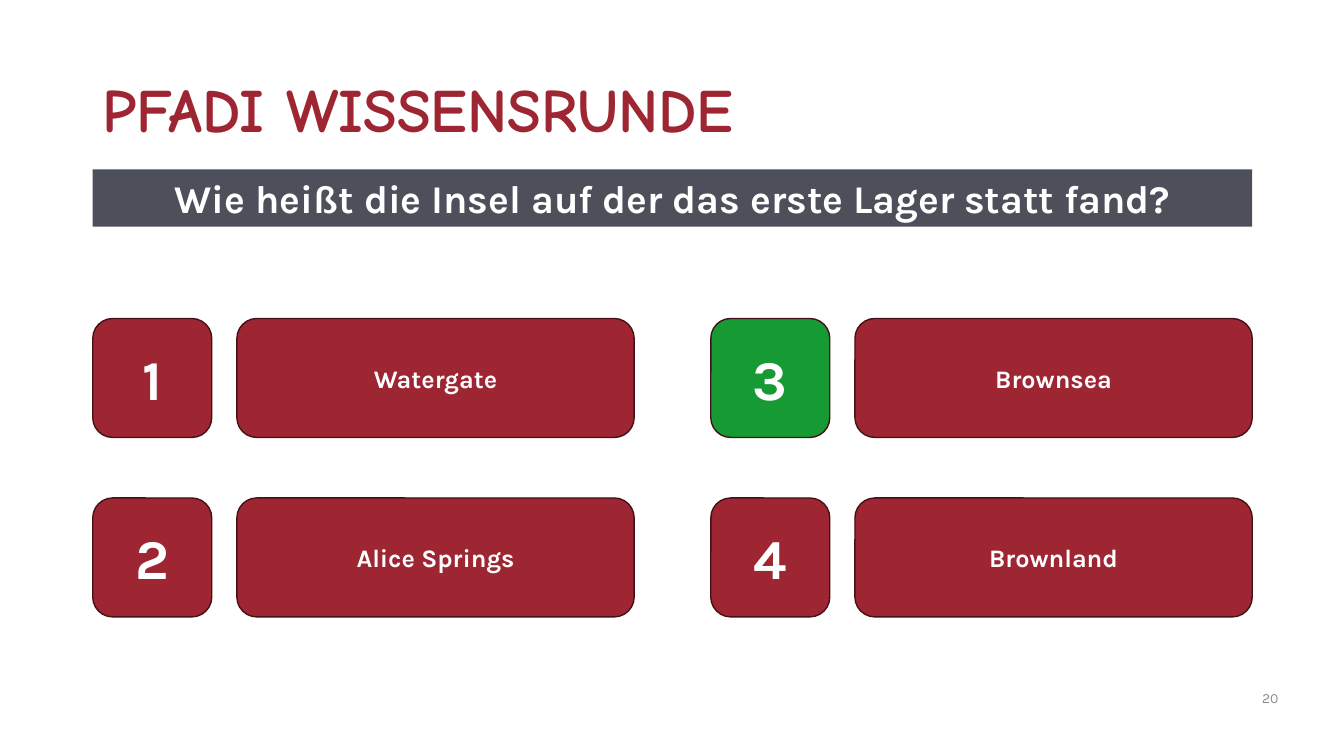
from dataclasses import dataclass

from pptx import Presentation
from pptx.dml.color import RGBColor
from pptx.enum import shapes, text
from pptx.util import Inches, Pt


@dataclass(frozen=True)
class Theme:
    red: str = "9D2632"
    green: str = "159A34"
    slate: str = "4D4F5A"
    outline: str = "451116"
    white: str = "FFFFFF"
    grey: str = "8C8C8C"
    title_font: str = "Comic Neue"
    body_font: str = "Karla"
    title_size: int = 44
    number_size: int = 40
    question_size: int = 28
    answer_size: int = 18
    footer_size: int = 10


THEME = Theme()
LEFT, CONTENT_WIDTH = 0.92, 11.5
TILE, ANSWER_WIDTH = 1.18, 3.94
ANSWER_OFFSET = 1.43
GRID_TOP, COLUMN_STEP, ROW_STEP = 3.16, 6.13, 1.78
ANSWERS = ["Watergate", "Alice Springs", "Brownsea", "Brownland"]
CORRECT_NUMBER = 3


def write_text(shape, content, size, color, font=THEME.body_font, bold=True,
               align=text.PP_ALIGN.CENTER, anchor=text.MSO_ANCHOR.MIDDLE):
    frame = shape.text_frame
    frame.text = content
    frame.word_wrap = True
    frame.vertical_anchor = anchor
    paragraph = frame.paragraphs[0]
    paragraph.alignment = align
    values = {"name": font, "size": Pt(size), "bold": bold}
    for name, value in values.items():
        setattr(paragraph.font, name, value)
    paragraph.font.color.rgb = RGBColor.from_string(color)


def add_box(slide, kind, box, fill, outline=None):
    shape = slide.shapes.add_shape(kind, *map(Inches, box))
    shape.shadow.inherit = False
    shape.fill.solid()
    shape.fill.fore_color.rgb = RGBColor.from_string(fill)
    if outline:
        shape.line.color.rgb = RGBColor.from_string(outline)
        shape.line.width = Pt(1)
    else:
        shape.line.fill.background()
    return shape


def add_title(slide, content):
    title = slide.shapes.title
    box = {"left": LEFT, "top": 0.39, "width": CONTENT_WIDTH, "height": 1.45}
    for name, value in box.items():
        setattr(title, name, Inches(value))
    write_text(title, content, THEME.title_size, THEME.red,
               font=THEME.title_font, align=text.PP_ALIGN.LEFT)
    title.text_frame.paragraphs[0].line_spacing = 0.9


def add_question(slide, content):
    bar = add_box(slide, shapes.MSO_SHAPE.RECTANGLE,
                  (LEFT, 1.68, CONTENT_WIDTH, 0.57), THEME.slate)
    write_text(bar, content, THEME.question_size, THEME.white,
               anchor=text.MSO_ANCHOR.TOP)
    bar.text_frame.auto_size = text.MSO_AUTO_SIZE.SHAPE_TO_FIT_TEXT


def add_answer(slide, number, answer):
    """Place a number tile and its answer, filling the grid column by column."""
    column, row = divmod(number - 1, 2)
    left = LEFT + column * COLUMN_STEP
    top = GRID_TOP + row * ROW_STEP
    tile_fill = THEME.green if number == CORRECT_NUMBER else THEME.red
    parts = [
        (left, TILE, tile_fill, str(number), THEME.number_size),
        (left + ANSWER_OFFSET, ANSWER_WIDTH, THEME.red, answer, THEME.answer_size),
    ]
    for x, width, fill, content, size in parts:
        shape = add_box(slide, shapes.MSO_SHAPE.ROUNDED_RECTANGLE,
                        (x, top, width, TILE), fill, THEME.outline)
        write_text(shape, content, size, THEME.white)


def add_page_number(slide, number):
    box = slide.shapes.add_textbox(*map(Inches, (12.42, 6.72, 0.92, 0.4)))
    write_text(box, str(number), THEME.footer_size, THEME.grey, bold=False,
               align=text.PP_ALIGN.LEFT)


def main():
    presentation = Presentation()
    presentation.slide_width = Inches(13.33)
    presentation.slide_height = Inches(7.5)
    title_only = presentation.slide_layouts.get_by_name("Title Only")
    slide = presentation.slides.add_slide(title_only)
    add_title(slide, "PFADI WISSENSRUNDE")
    add_question(slide, "Wie heißt die Insel auf der das erste Lager statt fand?")
    for number, answer in enumerate(ANSWERS, start=1):
        add_answer(slide, number, answer)
    add_page_number(slide, 20)
    presentation.save("out.pptx")


if __name__ == "__main__":
    main()
